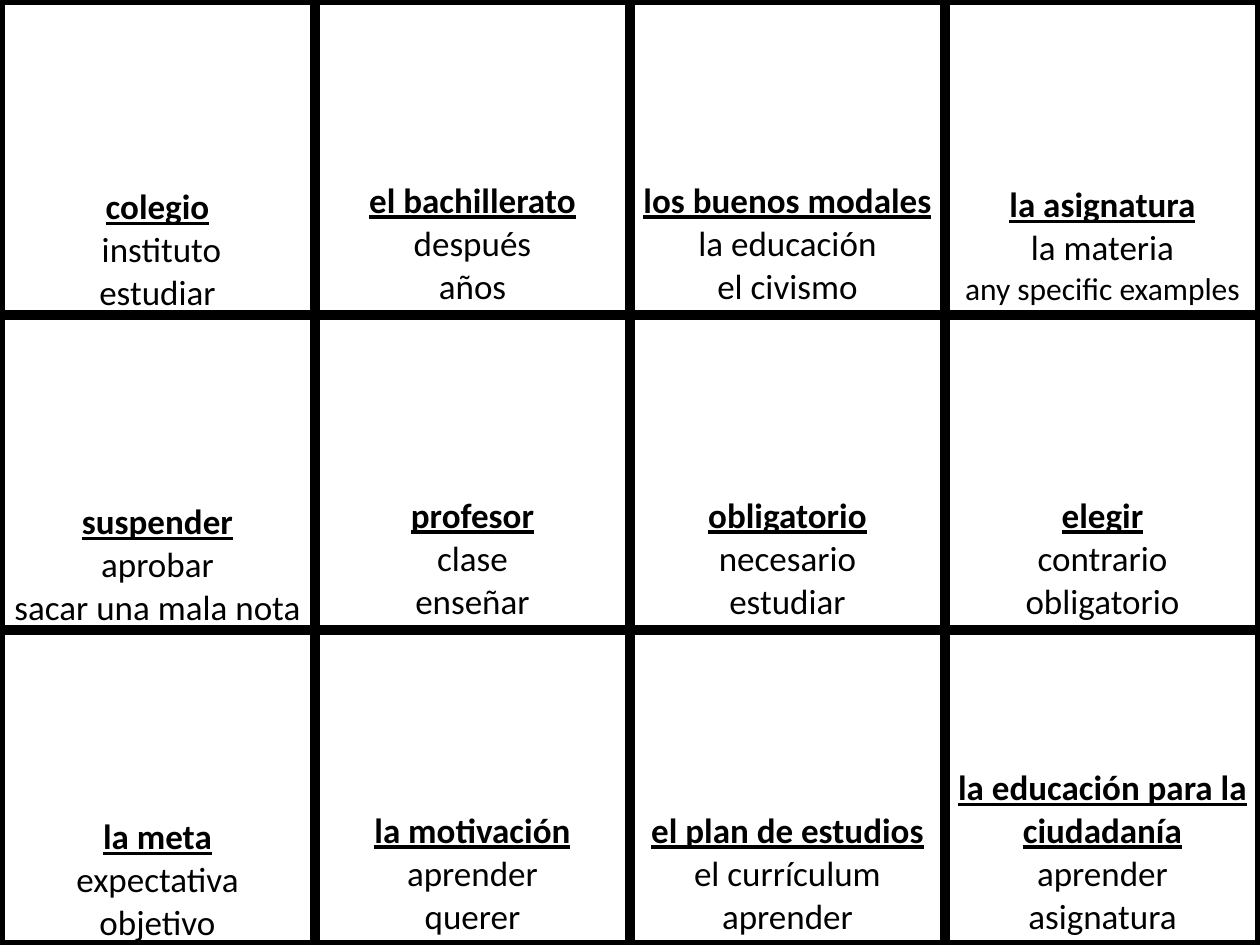
from lxml.etree import SubElement
from pptx import Presentation
from pptx.dml.color import RGBColor
from pptx.enum.text import MSO_ANCHOR, PP_ALIGN
from pptx.oxml.ns import qn
from pptx.util import Pt

# Each card lists its paragraphs; "|" is a line break, the first line is the headword.
CARDS = [
    [
        ["colegio| instituto|estudiar"],
        ["el bachillerato|después|años"],
        ["los buenos modales", "la educación", "el civismo"],
        ["la asignatura|la materia|any specific examples"],
    ],
    [
        ["suspender", "aprobar|sacar una mala nota"],
        ["profesor|clase|enseñar"],
        ["obligatorio", "necesario|estudiar"],
        ["elegir|contrario|obligatorio"],
    ],
    [
        ["la meta|expectativa|objetivo"],
        ["la motivación", "aprender", "querer"],
        ["el plan de estudios|el currículum|aprender"],
        ["la educación para la ciudadanía", "aprender|asignatura"],
    ],
]
SMALL_LINES = {"any specific examples"}
CARD_SIZE = 180
BORDER_WIDTH = 6
INK = "000000"
HEADWORD = {"name": "Calibri", "size": Pt(20), "bold": True, "underline": True}
CLUE = {"name": "Calibri", "size": Pt(20), "bold": False, "underline": False}
SMALL_CLUE = {**CLUE, "size": Pt(18)}
MARGINS = ("margin_left", "margin_top", "margin_right", "margin_bottom")


def color(value):
    return RGBColor.from_string(value)


def set_borders(cell):
    properties = cell._tc.get_or_add_tcPr()
    for side in ("a:lnL", "a:lnR", "a:lnT", "a:lnB"):
        line = SubElement(properties, qn(side), w=str(Pt(BORDER_WIDTH)))
        fill = SubElement(line, qn("a:solidFill"))
        SubElement(fill, qn("a:srgbClr"), val=INK)


def add_span(para, text, style):
    span = para.add_run()
    span.text = text
    for name, value in style.items():
        setattr(span.font, name, value)
    span.font.color.rgb = color(INK)


def write_card(cell, paragraphs):
    style = HEADWORD
    for para_index, paragraph in enumerate(paragraphs):
        frame = cell.text_frame
        para = frame.add_paragraph() if para_index else frame.paragraphs[0]
        para.alignment = PP_ALIGN.CENTER
        for line_index, line in enumerate(paragraph.split("|")):
            if line_index:
                para.add_line_break()
            add_span(para, line, SMALL_CLUE if line in SMALL_LINES else style)
            style = CLUE


def main():
    deck = Presentation()
    row_count, column_count = len(CARDS), len(CARDS[0])
    width, height = Pt(CARD_SIZE * column_count), Pt(CARD_SIZE * row_count)
    deck.slide_width, deck.slide_height = width, height
    page = deck.slides.add_slide(deck.slide_layouts[6])

    table = page.shapes.add_table(row_count, column_count, 0, 0, width, height).table
    table.first_row = table.horz_banding = False
    for column in table.columns:
        column.width = Pt(CARD_SIZE)
    for row, cards in zip(table.rows, CARDS):
        row.height = Pt(CARD_SIZE)
        for column_index, (cell, card) in enumerate(zip(row.cells, cards)):
            set_borders(cell)
            cell.fill.background()
            cell.vertical_anchor = MSO_ANCHOR.BOTTOM
            if column_index == 0:
                for margin in MARGINS:
                    setattr(cell, margin, 0)
            write_card(cell, card)

    deck.save("out.pptx")


if __name__ == "__main__":
    main()
